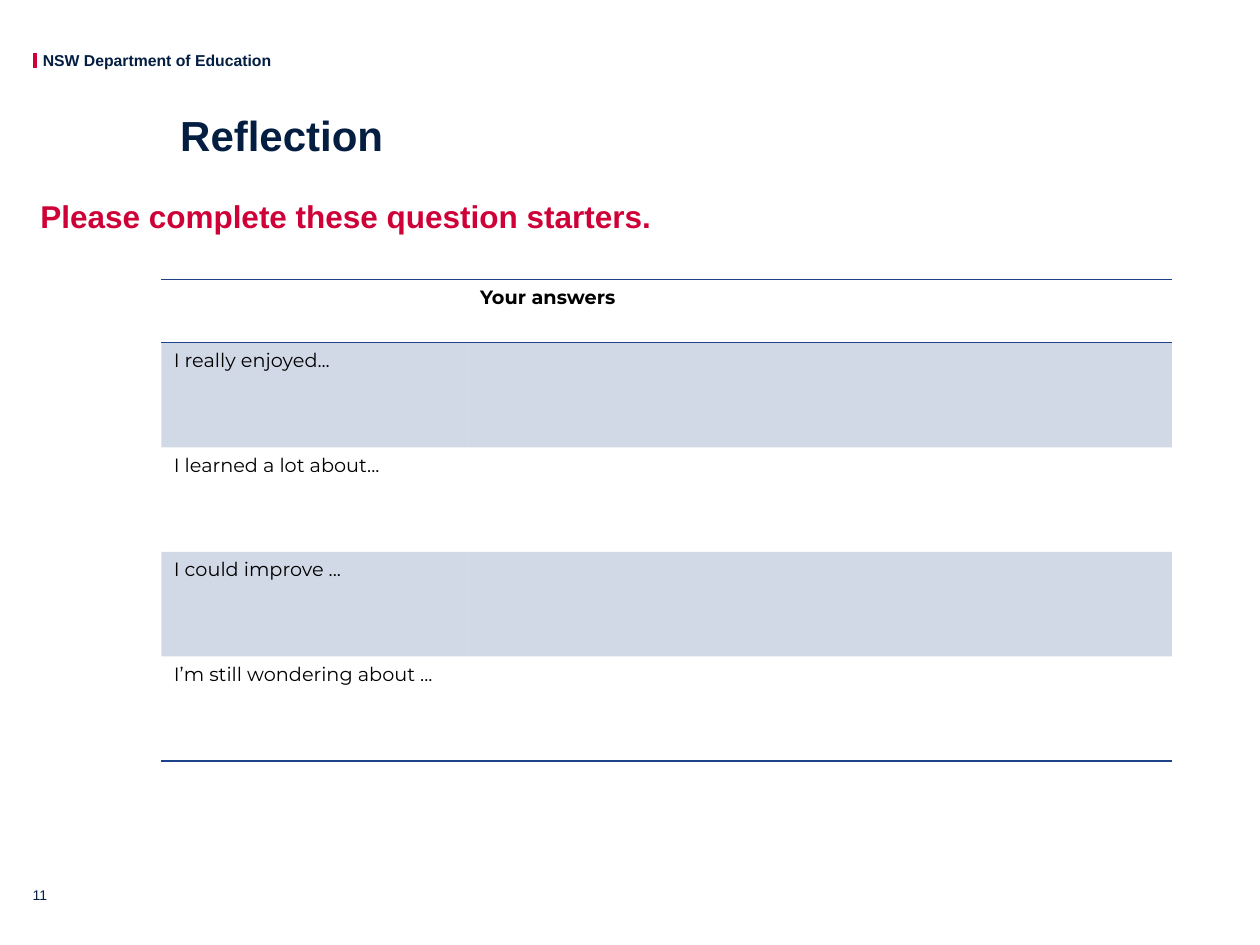
from lxml import etree
from pptx import Presentation
from pptx.dml.color import RGBColor
from pptx.enum.shapes import MSO_CONNECTOR as Connector
from pptx.enum.text import MSO_ANCHOR as Anchor, MSO_AUTO_SIZE as AutoSize, PP_ALIGN as Align
from pptx.oxml.ns import qn
from pptx.util import Inches, Pt

NAVY = RGBColor(0x04, 0x1E, 0x42)
RED = RGBColor(0xCE, 0x00, 0x37)
BLUE = RGBColor(0x1D, 0x42, 0x8A)
BLACK = RGBColor(0, 0, 0)
PLAIN_TABLE = "{2D5ABB26-0587-4C30-8999-92F81FD0307C}"
STARTERS = [
    "I really enjoyed...",
    "I learned a lot about...",
    "I could improve ...",
    "I’m still wondering about ...",
]


class ReflectionPage:
    heading_font = "Arial"
    table_font = "Montserrat"

    def __init__(self, deck):
        self.page = deck.slides.add_slide(deck.slide_layouts[1])

    def style(self, para, font, size, color, bold=False):
        for span in para.runs:
            span.font.name = font
            span.font.size = Pt(size)
            span.font.bold = bold
            span.font.color.rgb = color

    def set_text(self, box, text, size, color, bold, anchor, margins=(0, 0, 0, 0)):
        frame = box.text_frame
        frame.text = text
        frame.vertical_anchor = anchor
        frame.margin_left, frame.margin_top, frame.margin_right, frame.margin_bottom = map(Inches, margins)
        para = frame.paragraphs[0]
        para.alignment = Align.LEFT
        para.space_before = Pt(0)
        self.style(para, self.heading_font, size, color, bold)
        return para

    def place(self, box, left, top, width, height):
        box.left, box.top = Inches(left), Inches(top)
        box.width, box.height = Inches(width), Inches(height)

    def title(self, text, at, indent):
        box = self.page.shapes.title
        self.place(box, *at)
        para = self.set_text(box, text, 24, NAVY, True, Anchor.MIDDLE, (indent, 0, 0, 0))
        para.line_spacing = 0.9
        box.text_frame.auto_size = AutoSize.NONE

    def body(self, text, at):
        box = self.page.placeholders[1]
        self.place(box, *at)
        para = self.set_text(box, text, 18, RED, True, Anchor.TOP, (0, 0.05, 0.1, 0.05))
        para.line_spacing = 1.5
        para.space_after = Pt(4.5)
        box.text_frame.auto_size = AutoSize.NONE
        properties = para._p.get_or_add_pPr()
        properties.set("marL", "0")
        properties.set("indent", "0")
        etree.SubElement(properties, qn("a:buNone"))

    def label(self, text, at, size, bold=False, anchor=Anchor.TOP, wrap=False):
        box = self.page.shapes.add_textbox(*map(Inches, at))
        self.set_text(box, text, size, NAVY, bold, anchor)
        box.text_frame.word_wrap = wrap

    def line(self, start, end, color, width):
        line = self.page.shapes.add_connector(Connector.STRAIGHT, *map(Inches, start + end))
        line.line.color.rgb = color
        line.line.width = Pt(width)
        etree.SubElement(line._element.spPr, qn("a:effectLst"))

    def border(self, cell, side):
        edge = etree.SubElement(cell._tc.get_or_add_tcPr(), qn(f"a:ln{side}"), w=str(Pt(1)))
        fill = etree.SubElement(edge, qn("a:solidFill"))
        etree.SubElement(fill, qn("a:srgbClr"), val=str(BLUE))

    def shade(self, cell, opacity):
        cell.fill.solid()
        cell.fill.fore_color.rgb = BLUE
        color = cell._tc.tcPr.find(qn("a:solidFill"))[0]
        etree.SubElement(color, qn("a:alpha"), val=str(opacity * 1000))

    def table(self, rows, at, widths, heights):
        table = self.page.shapes.add_table(len(rows), len(widths), *map(Inches, at)).table
        table._tbl.tblPr.find(qn("a:tableStyleId")).text = PLAIN_TABLE
        table.horz_banding = False
        for column, width in zip(table.columns, widths):
            column.width = Inches(width)
        last = len(rows) - 1
        for number, (texts, height) in enumerate(zip(rows, heights)):
            table.rows[number].height = Inches(height)
            for cell, text in zip(table.rows[number].cells, texts):
                cell.text = text
                self.style(cell.text_frame.paragraphs[0], self.table_font, 11, BLACK, number == 0)
                if number == 0:
                    self.border(cell, "T")
                if number in (0, last):
                    self.border(cell, "B")
                if number % 2:
                    self.shade(cell, 20)
                else:
                    cell.fill.background()


def main():
    deck = Presentation()
    deck.slide_width, deck.slide_height = Inches(10), Inches(7.5)
    page = ReflectionPage(deck)
    page.line((0.28, 0.42), (0.28, 0.54), RED, 2.5)
    page.label("NSW Department of Education", (0.34, 0.4, 1.83, 0.15), 9, bold=True)
    page.title("Reflection", (0.32, 0.82, 9.43, 0.55), indent=1.11)
    page.body("Please complete these question starters.", (0.32, 1.36, 9.44, 0.46))
    page.label("11", (0.26, 6.77, 0.3, 0.4), 8, anchor=Anchor.BOTTOM, wrap=True)
    rows = [("", "Your answers")] + [(starter, "") for starter in STARTERS]
    page.table(rows, (1.28, 2.22, 8.02, 3.82), (2.43, 5.59), [0.5] + [0.83] * len(STARTERS))
    deck.save("out.pptx")


if __name__ == "__main__":
    main()
